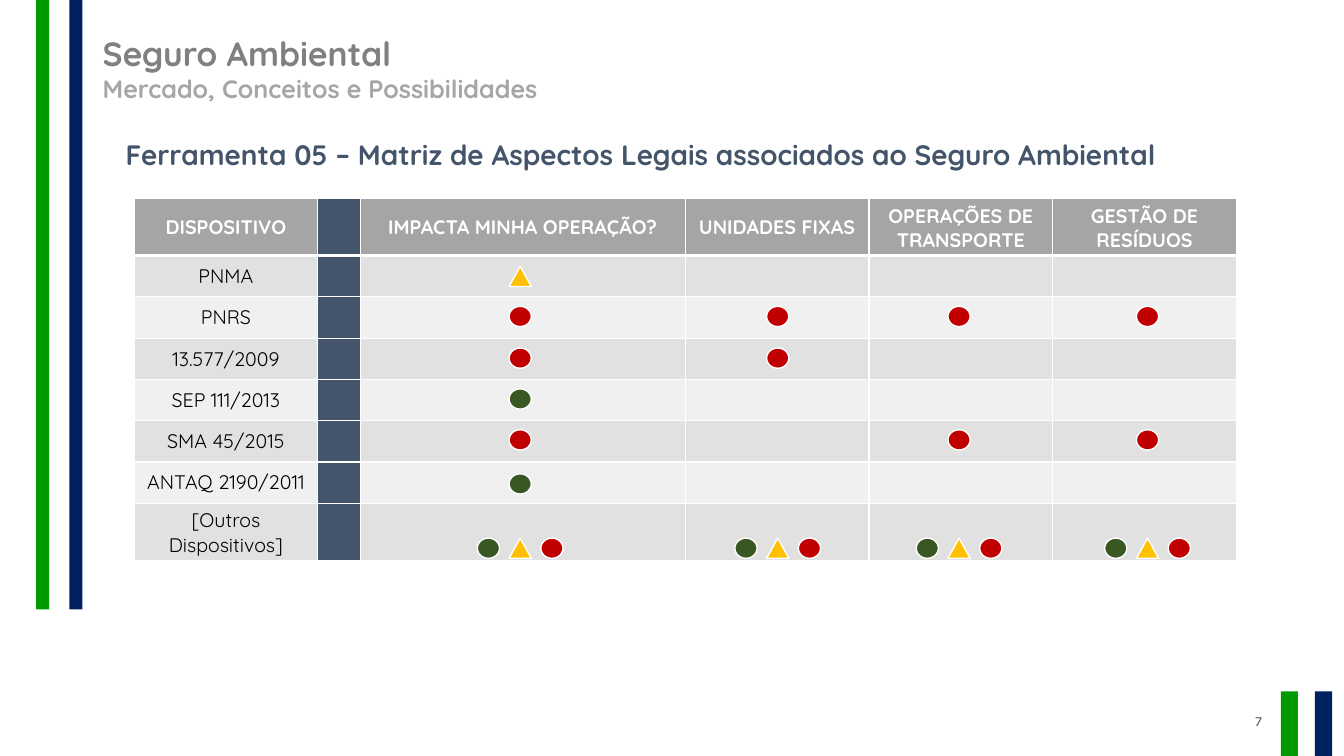
from lxml.etree import SubElement
from pptx import Presentation
from pptx.dml.color import RGBColor
from pptx.enum.shapes import MSO_SHAPE as Shape
from pptx.enum.text import MSO_ANCHOR as Anchor, MSO_AUTO_SIZE as AutoSize, PP_ALIGN as Align
from pptx.oxml.ns import qn
from pptx.util import Cm, Pt

GREEN = RGBColor(0x00, 0x99, 0x00)
NAVY = RGBColor(0x00, 0x20, 0x60)
SLATE = RGBColor(0x44, 0x54, 0x6A)
TITLE_GRAY = RGBColor(0x80, 0x80, 0x80)
SUBTITLE_GRAY = RGBColor(0xA6, 0xA6, 0xA6)
NUMBER_GRAY = RGBColor(0x59, 0x59, 0x59)
HEADER_GRAY = RGBColor(0xA5, 0xA5, 0xA5)
BANDS = (RGBColor(0xF0, 0xF0, 0xF0), RGBColor(0xE1, 0xE1, 0xE1))
WHITE = RGBColor(0xFF, 0xFF, 0xFF)
BLACK = RGBColor(0x00, 0x00, 0x00)

MARKERS = {
    "green": (Shape.OVAL, RGBColor(0x38, 0x57, 0x23)),
    "yellow": (Shape.FLOWCHART_EXTRACT, RGBColor(0xFF, 0xC0, 0x00)),
    "red": (Shape.OVAL, RGBColor(0xC0, 0x00, 0x00)),
}
HEADERS = ["DISPOSITIVO", "", "IMPACTA MINHA OPERAÇÃO?", "UNIDADES FIXAS",
           "OPERAÇÕES DE TRANSPORTE", "GESTÃO DE RESÍDUOS"]
DEVICES = ["PNMA", "PNRS", "13.577/2009", "SEP 111/2013", "SMA 45/2015",
           "ANTAQ 2190/2011", "[Outros Dispositivos]"]
COLUMN_WIDTHS = [4.63, 1.07, 8.19, 4.63, 4.63, 4.63]
MARKER_LEFTS = [12.83, 19.32, 23.89, 28.64]
MARKER_ROWS = [
    (6.71, ["yellow"]),
    (7.72, ["red", "red", "red", "red"]),
    (8.77, ["red", "red"]),
    (9.8, ["green"]),
    (10.83, ["red", None, "red", "red"]),
    (11.94, ["green"]),
]
MARKER_STEP = 0.8
LAST_ROW_TOP = 13.56


class SlideBuilder:
    """Holds the slide and its style, and adds each kind of element."""

    def __init__(self, slide, font="Quicksand"):
        self.slide = slide
        self.font = font

    def add_styled_run(self, paragraph, text, color, **style):
        run = paragraph.add_run()
        run.text = text
        for name, value in {"name": self.font, **style}.items():
            setattr(run.font, name, value)
        run.font.color.rgb = color

    def shape(self, kind, left, top, width, height, fill, line=None):
        shape = self.slide.shapes.add_shape(kind, Cm(left), Cm(top), Cm(width), Cm(height))
        shape.shadow.inherit = False
        shape.fill.solid()
        shape.fill.fore_color.rgb = fill
        if line is None:
            shape.line.fill.background()
        else:
            shape.line.color.rgb = line
            shape.line.width = Pt(1)

    def marker(self, name, left, top):
        kind, fill = MARKERS[name]
        self.shape(kind, left, top, 0.56, 0.51, fill, WHITE)

    def text(self, left, top, width, height, lines, align=Align.LEFT, **frame_format):
        box = self.slide.shapes.add_textbox(Cm(left), Cm(top), Cm(width), Cm(height))
        frame = box.text_frame
        for name, value in {"word_wrap": True, **frame_format}.items():
            setattr(frame, name, value)
        for index, (text, style) in enumerate(lines):
            paragraph = frame.add_paragraph() if index else frame.paragraphs[0]
            paragraph.alignment = align
            self.add_styled_run(paragraph, text, **style)

    def borders(self, cell, top, bottom):
        properties = cell._tc.get_or_add_tcPr()
        for side, width in {"lnL": 1, "lnR": 1, "lnT": top, "lnB": bottom}.items():
            line = SubElement(properties, qn(f"a:{side}"), w=str(Pt(width)))
            fill = SubElement(line, qn("a:solidFill"))
            SubElement(fill, qn("a:srgbClr"), val=str(WHITE))

    def table(self, left, top, widths, row_height, rows):
        frame = self.slide.shapes.add_table(
            len(rows), len(widths), Cm(left), Cm(top),
            Cm(sum(widths)), Cm(row_height * len(rows)))
        table = frame.table
        for column, width in zip(table.columns, widths):
            column.width = Cm(width)
        for row_index, values in enumerate(rows):
            header = row_index == 0
            table.rows[row_index].height = Cm(row_height)
            for column_index, value in enumerate(values):
                cell = table.cell(row_index, column_index)
                self.borders(cell, 3 if row_index == 1 else 1, 3 if header else 1)
                cell.fill.solid()
                row_fill = HEADER_GRAY if header else BANDS[row_index % 2]
                cell.fill.fore_color.rgb = SLATE if column_index == 1 else row_fill
                cell.vertical_anchor = Anchor.MIDDLE
                if value:
                    paragraph = cell.text_frame.paragraphs[0]
                    paragraph.alignment = Align.CENTER
                    self.add_styled_run(paragraph, value, size=Pt(14), bold=header,
                                        color=WHITE if header else BLACK)


def main():
    presentation = Presentation()
    presentation.slide_width = Cm(33.87)
    presentation.slide_height = Cm(19.05)
    builder = SlideBuilder(presentation.slides.add_slide(presentation.slide_layouts[6]))

    for left, corner_left, color in ((0.91, 32.28, GREEN), (1.75, 33.14, NAVY)):
        builder.shape(Shape.RECTANGLE, left, 0, 0.33, 15.36, color)
        builder.shape(Shape.RECTANGLE, corner_left, 17.42, 0.43, 1.63, color)

    builder.text(24.43, 17.65, 7.62, 1.02,
                 [("7", dict(size=Pt(10), name="Karla", color=NUMBER_GRAY))],
                 Align.RIGHT, vertical_anchor=Anchor.MIDDLE)
    builder.text(2.34, 0.71, 24.87, 2.06, [
        ("Seguro Ambiental", dict(size=Pt(24), bold=True, color=TITLE_GRAY)),
        ("Mercado, Conceitos e Possibilidades",
         dict(size=Pt(18), bold=True, color=SUBTITLE_GRAY)),
    ], auto_size=AutoSize.SHAPE_TO_FIT_TEXT)
    builder.text(2.92, 3.33, 29.39, 1.12, [
        ("Ferramenta 05 – Matriz de Aspectos Legais associados ao Seguro Ambiental",
         dict(size=Pt(20), bold=True, color=SLATE)),
    ], auto_size=AutoSize.SHAPE_TO_FIT_TEXT)

    blanks = [""] * (len(HEADERS) - 1)
    builder.table(3.38, 5.0, COLUMN_WIDTHS, 1.04,
                  [HEADERS] + [[device] + blanks for device in DEVICES])

    for top, names in MARKER_ROWS:
        for left, name in zip(MARKER_LEFTS, names):
            if name:
                builder.marker(name, left, top)
    for left in MARKER_LEFTS:
        for index, name in enumerate(MARKERS):
            builder.marker(name, left + (index - 1) * MARKER_STEP, LAST_ROW_TOP)

    presentation.save("out.pptx")


if __name__ == "__main__":
    main()
